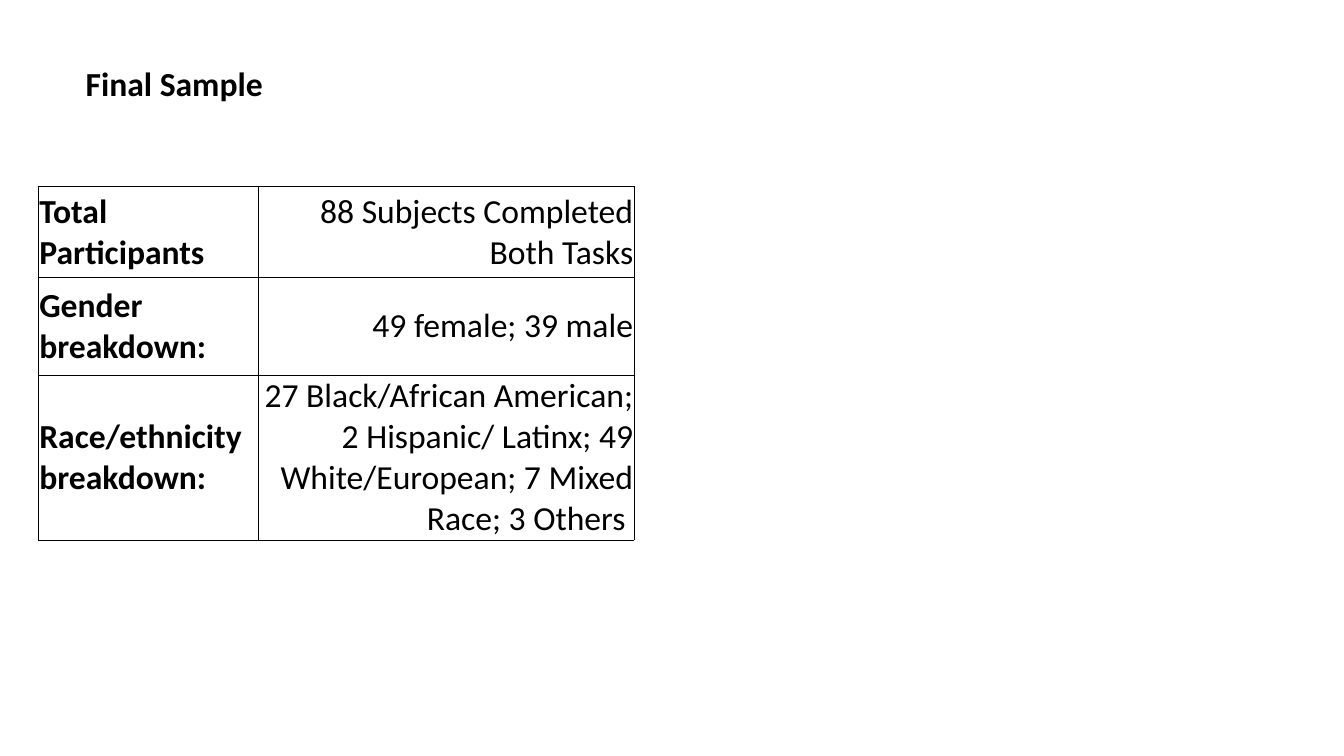
from lxml import etree
from pptx import Presentation
from pptx.dml.color import RGBColor
from pptx.enum.text import MSO_ANCHOR, PP_ALIGN
from pptx.oxml.ns import qn
from pptx.util import Inches, Pt

LEFT, RIGHT = PP_ALIGN.LEFT, PP_ALIGN.RIGHT
MIDDLE = MSO_ANCHOR.MIDDLE


class Theme:
    font = "Calibri"
    size = Pt(24)
    ink = "000000"
    rule = Pt(0.5)


def add_run(par, text, bold, align):
    par.alignment = align
    run = par.add_run()
    run.text = text
    font = run.font
    font.name, font.size, font.bold = Theme.font, Theme.size, bold
    font.color.rgb = RGBColor.from_string(Theme.ink)


def add_border(cell):
    props = cell._tc.get_or_add_tcPr()
    for n, side in enumerate(("lnL", "lnR", "lnT", "lnB")):
        line = etree.Element(qn(f"a:{side}"), w=str(Theme.rule))
        fill = etree.SubElement(line, qn("a:solidFill"))
        etree.SubElement(fill, qn("a:srgbClr"), val=Theme.ink)
        props.insert(n, line)


# Slide
deck = Presentation()
deck.slide_width, deck.slide_height = Inches(13.33), Inches(7.5)
slide = deck.slides.add_slide(deck.slide_layouts[5])

# Title
title = slide.shapes.title
title.left, title.top = Inches(0.75), Inches(0.12)
title.width, title.height = Inches(11.5), Inches(1.45)
frame = title.text_frame
frame.word_wrap = True
frame.vertical_anchor = MIDDLE
frame.paragraphs[0].line_spacing = 0.9
add_run(frame.paragraphs[0], "Final Sample", True, LEFT)

# Sample table: labels on the left, counts on the right
rows = [
    (["Total Participants"], ["88 Subjects Completed Both Tasks"]),
    (["Gender breakdown:"], ["49 female; 39 male"]),
    (["Race/ethnicity", "breakdown:"],
     ["27 Black/African American; 2 Hispanic/ Latinx; 49 White/European; "
      "7 Mixed Race; 3 Others "]),
]
widths = [2.18, 3.73]
heights = [0.9, 0.97, 1.45]
table = slide.shapes.add_table(
    len(rows), len(widths), Inches(0.38), Inches(1.85),
    Inches(sum(widths)), Inches(sum(heights))).table
table.first_row = table.horz_banding = False
for col, width in zip(table.columns, widths):
    col.width = Inches(width)

for r, row in enumerate(rows):
    table.rows[r].height = Inches(heights[r])
    for c, lines in enumerate(row):
        cell = table.cell(r, c)
        cell.fill.background()
        cell.vertical_anchor = MIDDLE
        cell.margin_left = cell.margin_right = cell.margin_top = Inches(0.01)
        cell.margin_bottom = 0
        add_border(cell)
        for n, line in enumerate(lines):
            text = cell.text_frame
            par = text.add_paragraph() if n else text.paragraphs[0]
            add_run(par, line, c == 0, RIGHT if c else LEFT)

deck.save("out.pptx")
